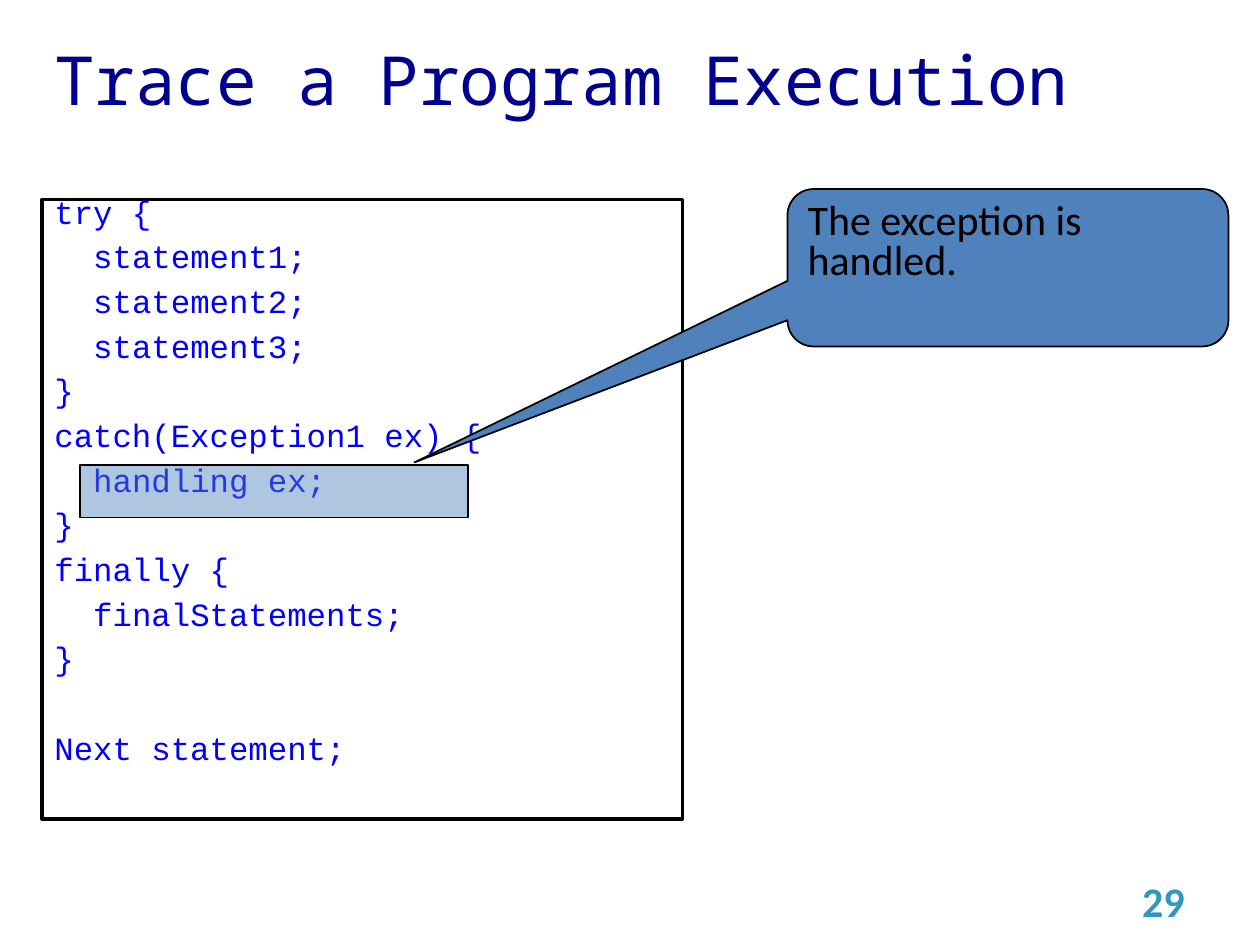
from lxml import etree
from pptx import Presentation
from pptx.dml.color import RGBColor
from pptx.enum.shapes import MSO_SHAPE
from pptx.enum.text import MSO_ANCHOR, PP_ALIGN
from pptx.oxml.ns import qn
from pptx.util import Inches, Pt

THEME = {
    "title": {"name": "Noto Sans Mono", "size": Pt(38.7), "color": "000090"},
    "code": {"name": "Courier New", "size": Pt(18.5), "color": "0000FF"},
    "callout": {"name": "Calibri", "size": Pt(24), "color": "000000"},
    "number": {"name": "Calibri", "size": Pt(24), "color": "2E98BD", "bold": True},
    "paper": "FFFFFF",
    "accent": "4F81BD",
    "outline": "000000",
}
CODE = [  # (indent level, statement)
    (0, "try {"),
    (1, "statement1;"),
    (1, "statement2;"),
    (1, "statement3;"),
    (0, "}"),
    (0, "catch(Exception1 ex) {"),
    (1, "handling ex;"),
    (0, "}"),
    (0, "finally {"),
    (1, "finalStatements;"),
    (0, "}"),
    (0, "Next statement;"),
]
LINE_SPACING, LINE_GAP, SECTION_GAP = 0.6, Pt(12.2), Pt(37.8)
INDENT = Pt(22.2)  # two monospaced characters

deck = Presentation()
deck.slide_width, deck.slide_height = Inches(10), Inches(7.5)
slide = deck.slides.add_slide(deck.slide_layouts[6])
COL, ROW = deck.slide_width / 120, deck.slide_height / 90


def add_panel(col, row, cols, rows, preset=None, fill=None, line=1):
    """Place a preset shape, or a text box when no preset is given, on the grid."""
    box = [int(v) for v in (col * COL, row * ROW, cols * COL, rows * ROW)]
    if preset is None:
        panel = slide.shapes.add_textbox(*box)
    else:
        panel = slide.shapes.add_shape(preset, *box)
        panel.shadow.inherit = False
        panel.fill.solid()
        panel.fill.fore_color.rgb = RGBColor.from_string(fill)
        panel.line.color.rgb = RGBColor.from_string(THEME["outline"])
        panel.line.width = Pt(line)
    panel.text_frame.word_wrap = True
    panel.text_frame.vertical_anchor = MSO_ANCHOR.TOP if preset else MSO_ANCHOR.MIDDLE
    return panel


def write(paragraph, text, style, align=PP_ALIGN.LEFT):
    paragraph.alignment = align
    run = paragraph.add_run()
    run.text = text
    for key, value in THEME[style].items():
        if key == "color":
            run.font.color.rgb = RGBColor.from_string(value)
        else:
            setattr(run.font, key, value)


title = add_panel(4, 4, 107, 7)
write(title.text_frame.paragraphs[0], "Trace a Program Execution", "title")

listing = add_panel(4, 19, 61, 59, MSO_SHAPE.RECTANGLE, THEME["paper"], 2)
for index, (level, statement) in enumerate(CODE):
    frame = listing.text_frame
    code_line = frame.add_paragraph() if index else frame.paragraphs[0]
    code_line.line_spacing = LINE_SPACING
    if index:
        is_last = index == len(CODE) - 1
        code_line.space_before = SECTION_GAP if is_last else LINE_GAP
    code_line._p.get_or_add_pPr().set("marL", str(level * INDENT))
    write(code_line, statement, "code")

highlight = add_panel(7.6, 44.3, 37, 5, MSO_SHAPE.RECTANGLE, THEME["accent"])
tint = highlight._element.spPr.find(qn("a:solidFill")).find(qn("a:srgbClr"))
etree.SubElement(tint, qn("a:alpha")).set("val", "45000")

callout = add_panel(75, 18, 42, 15, MSO_SHAPE.ROUNDED_RECTANGULAR_CALLOUT, THEME["accent"])
for index, share in enumerate((-1.346, 1.236, 0.167)):
    callout.adjustments[index] = share
remark = callout.text_frame.paragraphs[0]
remark.line_spacing = 0.8
write(remark, "The exception is handled.", "callout")

page_number = add_panel(86, 83.4, 28, 4.8)
write(page_number.text_frame.paragraphs[0], "29", "number", PP_ALIGN.RIGHT)

deck.save("out.pptx")
